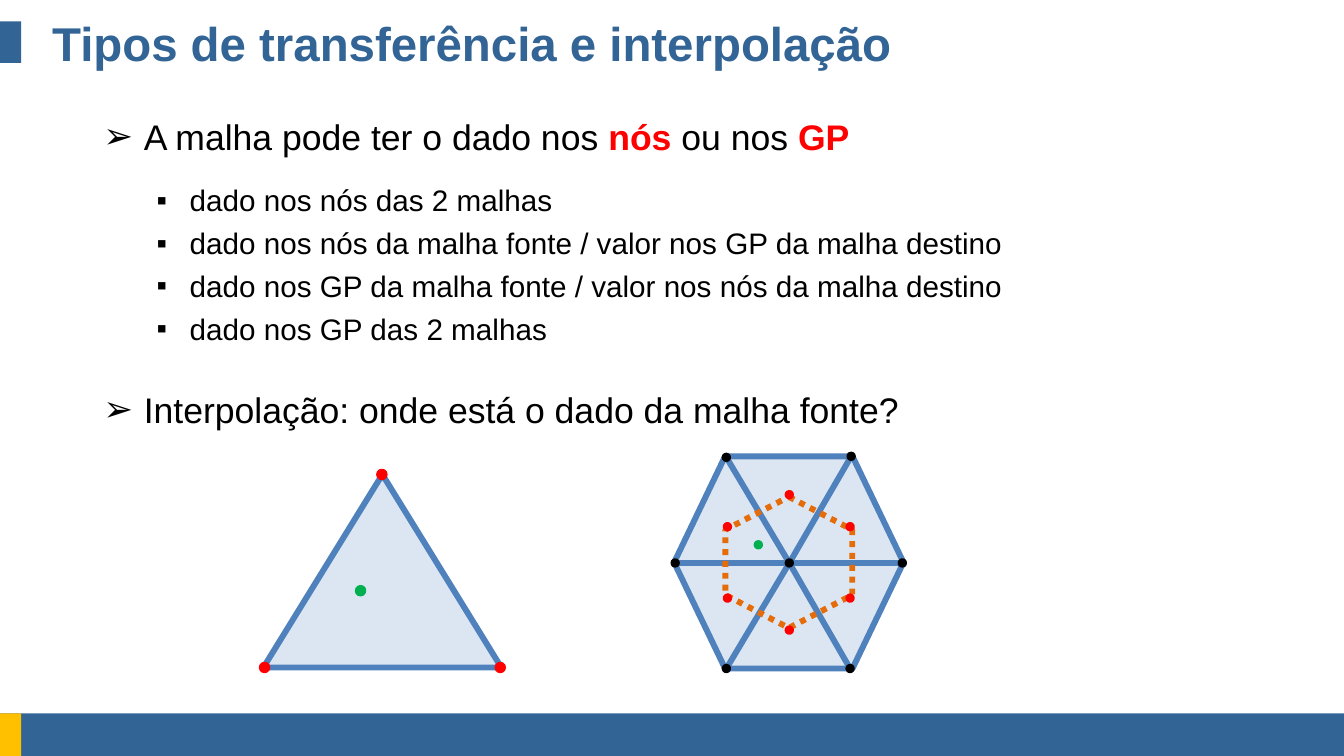
"""Build the slide on data transfer and interpolation between meshes."""
from lxml import etree
from pptx import Presentation
from pptx.dml.color import RGBColor
from pptx.enum.dml import MSO_LINE
from pptx.enum.shapes import MSO_CONNECTOR, MSO_SHAPE
from pptx.enum.text import MSO_ANCHOR
from pptx.oxml.ns import qn
from pptx.util import Inches, Pt

RECTANGLE = MSO_SHAPE.RECTANGLE
TRIANGLE = MSO_SHAPE.ISOSCELES_TRIANGLE
HEXAGON = MSO_SHAPE.HEXAGON
OVAL = MSO_SHAPE.OVAL
STRAIGHT = MSO_CONNECTOR.STRAIGHT
DOTTED = MSO_LINE.ROUND_DOT
MIDDLE = MSO_ANCHOR.MIDDLE

NAVY = RGBColor(0x32, 0x64, 0x96)
GOLD = RGBColor(0xFF, 0xC0, 0x00)
BLACK = RGBColor(0x00, 0x00, 0x00)
RED = RGBColor(0xFF, 0x00, 0x00)
GREEN = RGBColor(0x00, 0xB0, 0x50)
ORANGE = RGBColor(0xE4, 0x6C, 0x0A)
MESH_BLUE = RGBColor(0x4F, 0x81, 0xBD)
MESH_FILL = RGBColor(0xDC, 0xE6, 0xF2)
FONT = "Arial"

presentation = Presentation()
presentation.slide_width = Inches(12.6)
presentation.slide_height = Inches(7.09)
slide = presentation.slides.add_slide(presentation.slide_layouts[6])


def add_shape(kind, left, top, width, height, fill=None, line=None, line_width=4):
    shape = slide.shapes.add_shape(
        kind, Inches(left), Inches(top), Inches(width), Inches(height))
    shape.shadow.inherit = False
    if fill is None:
        shape.fill.background()
    else:
        shape.fill.solid()
        shape.fill.fore_color.rgb = fill
    if line is None:
        shape.line.fill.background()
    else:
        shape.line.color.rgb = line
        shape.line.width = Pt(line_width)
    return shape


def add_dots(centers, size, color):
    for x, y in centers:
        add_shape(OVAL, x - size / 2, y - size / 2, size, size, color, color, 2)


add_shape(RECTANGLE, 0, 6.69, 12.6, 0.4, NAVY)
add_shape(RECTANGLE, 0, 6.69, 0.2, 0.4, GOLD)
add_shape(RECTANGLE, 0, 0.2, 0.2, 0.39, NAVY)

title = slide.shapes.add_textbox(Inches(0.39), Inches(0.2), Inches(11.81), Inches(0.39))
title.text_frame.word_wrap = True
title.text_frame.vertical_anchor = MIDDLE
run = title.text_frame.paragraphs[0].add_run()
run.text = "Tipos de transferência e interpolação"
run.font.name = FONT
run.font.size = Pt(32)
run.font.bold = True
run.font.color.rgb = NAVY

LEVELS = [("➢", 24, 0.38, 0.38), ("▪", 20, 0.81, 0.31)]
BODY = [
    (0, 0, [("A malha pode ter o dado nos ", False), ("nós ", True),
            ("ou nos ", False), ("GP", True)]),
    (1, 16.5, [("dado nos nós das 2 malhas", False)]),
    (1, 5, [("dado nos nós da malha fonte / valor nos GP da malha destino", False)]),
    (1, 5, [("dado nos GP da malha fonte / valor nos nós da malha destino", False)]),
    (1, 5, [("dado nos GP das 2 malhas", False)]),
    (0, 28.3, [("Interpolação: onde está o dado da malha fonte?", False)]),
]
body = slide.shapes.add_textbox(Inches(0.87), Inches(1.03), Inches(11.7), Inches(3.1))
body.text_frame.word_wrap = True
for index, (level, space, pieces) in enumerate(BODY):
    frame = body.text_frame
    paragraph = frame.add_paragraph() if index else frame.paragraphs[0]
    bullet, size, margin, hanging = LEVELS[level]
    paragraph.level = level
    paragraph.space_before = Pt(space)
    properties = paragraph._p.get_or_add_pPr()
    properties.set("marL", str(Inches(margin)))
    properties.set("indent", str(-Inches(hanging)))
    etree.SubElement(properties, qn("a:buFont")).set("typeface", FONT)
    etree.SubElement(properties, qn("a:buChar")).set("char", bullet)
    for text, highlighted in pieces:
        run = paragraph.add_run()
        run.text = text
        run.font.name = FONT
        run.font.size = Pt(size)
        run.font.bold = highlighted
        run.font.color.rgb = RED if highlighted else BLACK

add_shape(TRIANGLE, 2.47, 4.45, 2.23, 1.81, MESH_FILL, MESH_BLUE)
add_dots([(3.58, 4.45), (2.48, 6.26), (4.69, 6.26)], 0.08, RED)
add_dots([(3.38, 5.54)], 0.08, GREEN)

patch = add_shape(HEXAGON, 6.32, 4.28, 2.15, 1.99, MESH_FILL, MESH_BLUE)
patch.adjustments[0] = 0.24
center = (7.4, 5.28)
nodes = [(6.81, 4.29), (7.98, 4.28), (8.46, 5.28), (7.97, 6.27), (6.81, 6.27), (6.33, 5.28)]
for x, y in nodes:
    edge = slide.shapes.add_connector(
        STRAIGHT, Inches(x), Inches(y), Inches(center[0]), Inches(center[1]))
    edge.line.color.rgb = MESH_BLUE
    edge.line.width = Pt(4)
    etree.SubElement(edge._element.spPr, qn("a:effectLst"))
add_dots(nodes + [center], 0.06, BLACK)

gauss_ring = add_shape(HEXAGON, 6.78, 4.68, 1.23, 1.19, line=ORANGE)
gauss_ring.adjustments[0] = 0.26
gauss_ring.rotation = 90
gauss_ring.line.dash_style = DOTTED
gauss_points = [(7.4, 4.64), (7.4, 5.91)]
gauss_points += [(x, y) for x in (6.82, 7.97) for y in (4.94, 5.61)]
add_dots(gauss_points, 0.06, RED)
add_dots([(7.11, 5.11)], 0.06, GREEN)

presentation.save("out.pptx")
